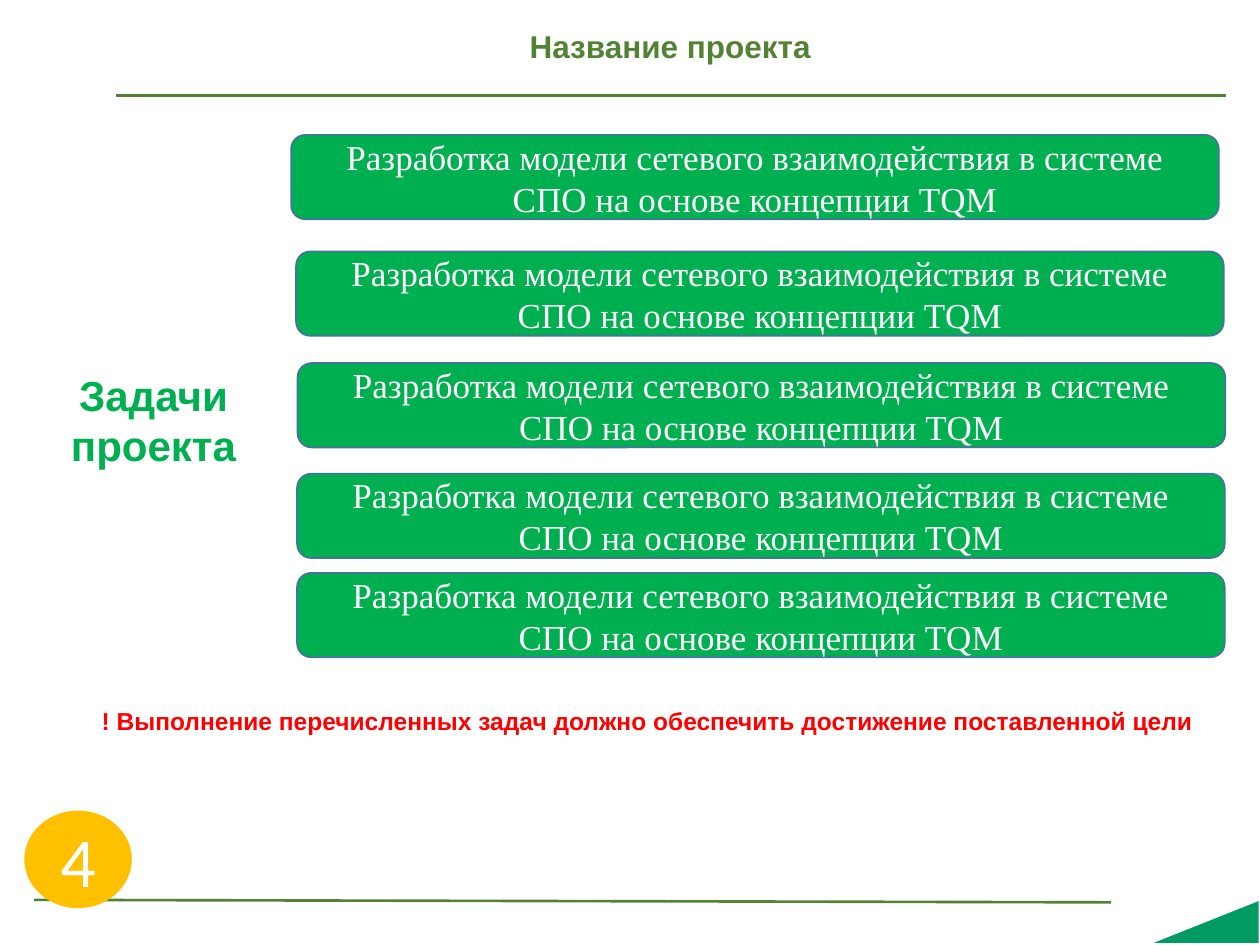
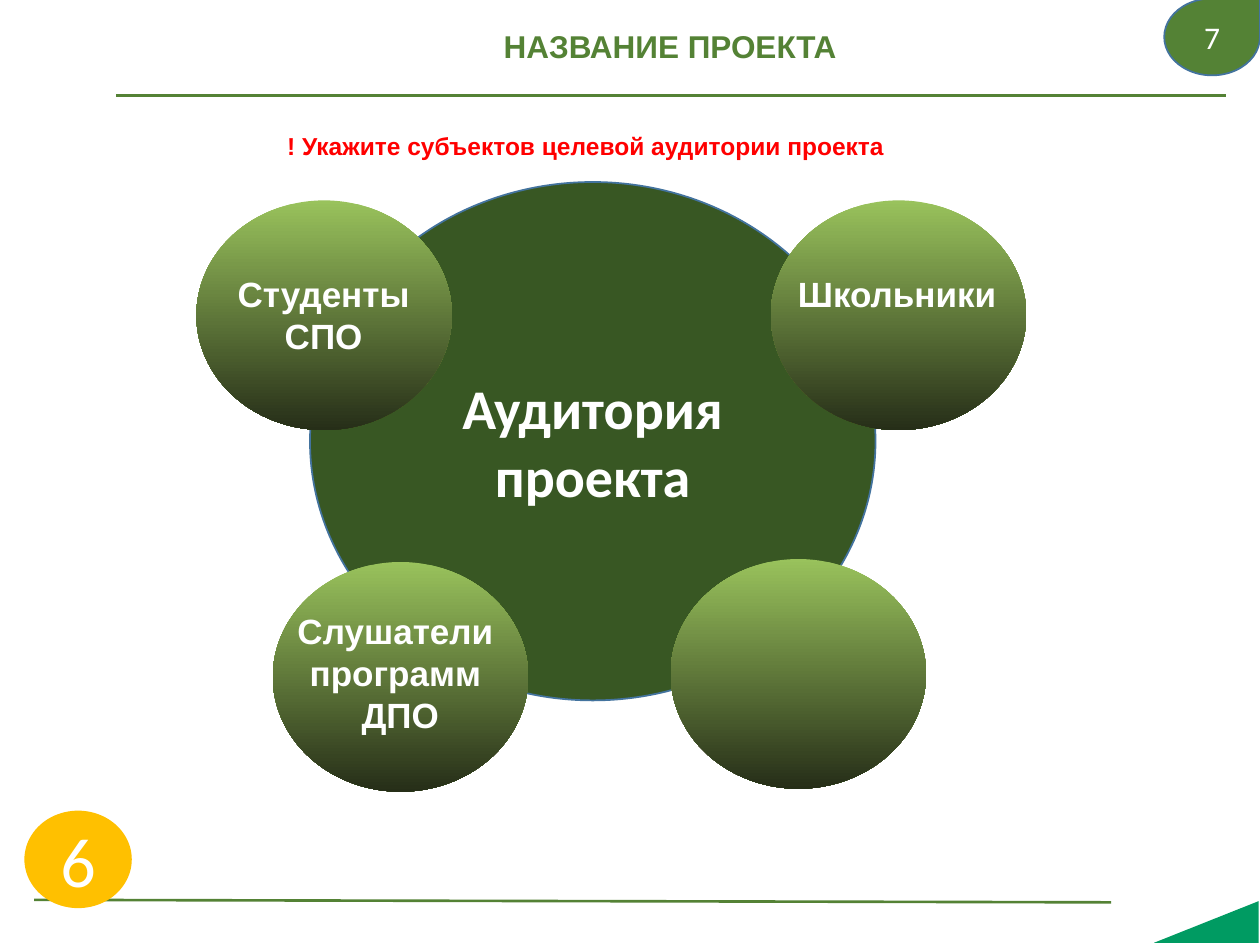
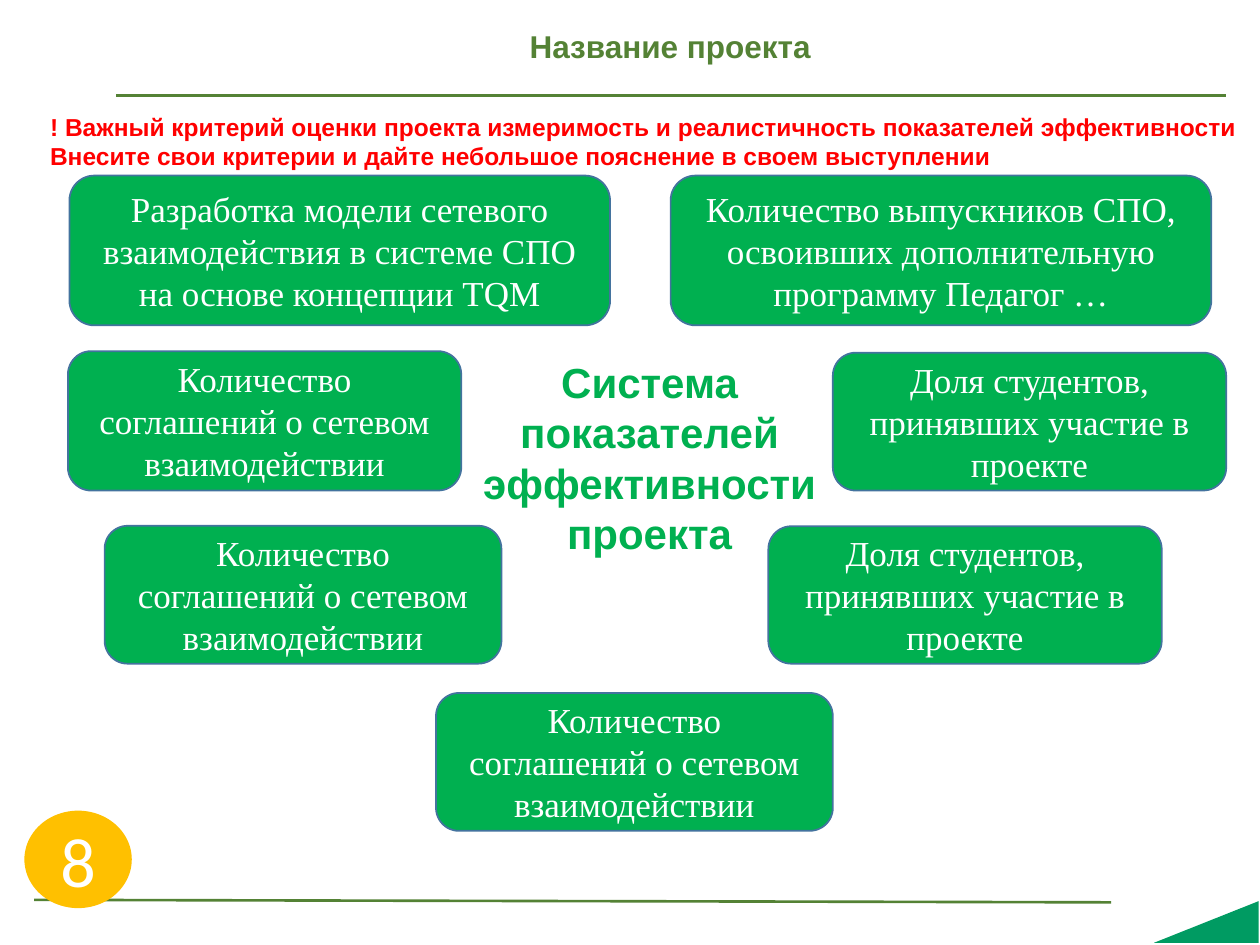
from lxml.etree import SubElement
from pptx import Presentation
from pptx.dml.color import RGBColor
from pptx.enum.shapes import MSO_CONNECTOR, MSO_SHAPE as Shape
from pptx.enum.text import MSO_ANCHOR as Anchor, MSO_AUTO_SIZE as AutoSize, PP_ALIGN as Align
from pptx.oxml.ns import qn
from pptx.util import Cm, Pt

# Colours and text styles
color = RGBColor.from_string
DARK_GREEN, GREEN, OUTLINE = "548235", "00B050", "43739E"
WHITE, RED, YELLOW = "FFFFFF", "FF0000", "FFC000"

STYLES = {
    "title": (DARK_GREEN, {"name": "Arial", "size": Pt(18), "bold": True}),
    "heading": (GREEN, {"name": "Arial", "size": Pt(24), "bold": True}),
    "note": (RED, {"name": "Arial", "size": Pt(14), "bold": True}),
    "card": (WHITE, {"name": "Times New Roman", "size": Pt(20), "bold": False}),
    "number": (WHITE, {"name": "Calibri", "size": Pt(40), "bold": False}),
    "corner": (WHITE, {"name": "Calibri", "size": Pt(18), "bold": False}),
    "center": (WHITE, {"name": "Calibri", "size": Pt(32), "bold": True}),
    "audience": (WHITE, {"name": "Arial", "size": Pt(20), "bold": True}),
}
MIDDLE = {"word_wrap": True, "vertical_anchor": Anchor.MIDDLE}
TOP = {"word_wrap": True, "vertical_anchor": Anchor.TOP}
FREE = {"word_wrap": False, "auto_size": AutoSize.SHAPE_TO_FIT_TEXT}


def write_text(shape, text, style, frame_format, align=Align.CENTER):
    frame = shape.text_frame
    for name, value in frame_format.items():
        setattr(frame, name, value)
    font_color, font_format = STYLES[style]
    frame.text = text
    for paragraph in frame.paragraphs:
        paragraph.alignment = align
        for run in paragraph.runs:
            run.font.color.rgb = color(font_color)
            for name, value in font_format.items():
                setattr(run.font, name, value)


def add_figure(slide, kind, place, fill, outline=None):
    shape = slide.shapes.add_shape(kind, *map(Cm, place))
    shape.shadow.inherit = False
    shape.fill.solid()
    shape.fill.fore_color.rgb = color(fill)
    if outline:
        shape.line.color.rgb = color(outline)
        shape.line.width = Pt(1)
    else:
        shape.line.fill.background()
    return shape


presentation = Presentation()
presentation.slide_width, presentation.slide_height = Cm(25.4), Cm(19.05)

# Shared parts: title, rules, corner triangle, slide number
slides = []
for title_text, number in [("Название проекта", "4"), ("НАЗВАНИЕ ПРОЕКТА", "6"),
                           ("Название проекта", "8")]:
    slide = presentation.slides.add_slide(presentation.slide_layouts[5])
    slides.append(slide)
    title = slide.shapes.title
    title.left, title.top, title.width, title.height = map(Cm, (2.03, 0.13, 22.96, 1.7))
    write_text(title, title_text, "title", MIDDLE)
    title.text_frame.paragraphs[0].line_spacing = 0.9

    for ends in [(2.34, 1.93, 24.71, 1.93), (0.69, 18.14, 22.4, 18.19)]:
        rule = slide.shapes.add_connector(MSO_CONNECTOR.STRAIGHT, *map(Cm, ends))
        rule.line.color.rgb = color(DARK_GREEN)
        rule.line.width = Pt(1.5)
        SubElement(rule._element.spPr, qn("a:effectLst"))

    triangle = add_figure(slide, Shape.RIGHT_TRIANGLE, (23.9, 17.53, 0.84, 2.11), "009B62")
    triangle.rotation = 270
    badge = add_figure(slide, Shape.OVAL, (0.51, 16.36, 2.13, 1.93), YELLOW, YELLOW)
    write_text(badge, number, "number", MIDDLE)

tasks_slide, audience_slide, indicators_slide = slides

# Red notes
notes = [
    (tasks_slide, (1.8, 14.1, 22.76, 0.86),
     "! Выполнение перечисленных задач должно обеспечить достижение поставленной цели"),
    (audience_slide, (5.54, 2.51, 12.83, 0.86),
     "! Укажите субъектов целевой аудитории проекта"),
    (indicators_slide, (0.76, 2.13, 24.64, 1.45),
     "! Важный критерий оценки проекта измеримость и реалистичность показателей эффективности\n"
     "Внесите свои критерии и дайте небольшое пояснение в своем выступлении"),
]
for slide, place, text in notes:
    write_text(slide.shapes.add_textbox(*map(Cm, place)), text, "note", FREE, Align.LEFT)

# Green headings
headings = [
    (tasks_slide, (0.3, 7.32, 5.59, 2.41), "Задачи проекта"),
    (indicators_slide, (8.79, 7.06, 8.61, 2.41), "Система показателей\nэффективности проекта"),
]
for slide, place, text in headings:
    write_text(slide.shapes.add_textbox(*map(Cm, place)), text, "heading", TOP)

# Green cards: tasks and indicators
MODEL = "Разработка модели сетевого взаимодействия в системе СПО на основе концепции TQM"
GRADUATES = "Количество выпускников СПО, освоивших дополнительную программу Педагог …"
AGREEMENTS = "Количество соглашений о сетевом взаимодействии"
STUDENTS = "Доля студентов, принявших участие в проекте"

task_corners = [(5.87, 2.72), (5.97, 5.07), (6, 7.32), (5.99, 9.55), (5.99, 11.55)]
cards = [(tasks_slide, (left, top, 18.7, 1.7), MODEL) for left, top in task_corners]
cards += [(indicators_slide, place, text) for place, text in [
    ((1.4, 3.54, 10.9, 3.02), MODEL),
    ((13.52, 3.54, 10.9, 3.02), GRADUATES),
    ((1.37, 7.08, 7.93, 2.81), AGREEMENTS),
    ((16.79, 7.11, 7.93, 2.78), STUDENTS),
    ((2.11, 10.6, 8, 2.78), AGREEMENTS),
    ((15.49, 10.61, 7.93, 2.77), STUDENTS),
    ((8.79, 13.97, 8, 2.78), AGREEMENTS),
]]
for slide, place, text in cards:
    card = add_figure(slide, Shape.ROUNDED_RECTANGLE, place, GREEN, OUTLINE)
    write_text(card, text, "card", MIDDLE)

# Audience: central circle and corner drop
center = add_figure(audience_slide, Shape.OVAL, (6.25, 3.67, 11.4, 10.45), "385723", OUTLINE)
write_text(center, "Аудитория проекта", "center", MIDDLE)
drop = add_figure(audience_slide, Shape.TEAR, (23.47, -0.03, 1.93, 1.55), DARK_GREEN, OUTLINE)
write_text(drop, "7", "corner", MIDDLE)

# Audience: gradient circles with their labels
groups = [
    (3.96, 4.04, "Студенты\nСПО", (4.52, 5.36, 4.01, 1.96)),
    (15.54, 4.04, "Школьники", (15.8, 5.36, 4.57, 1.12)),
    (5.5, 11.33, "Слушатели \nпрограмм \nДПО", (5.72, 12.17, 4.7, 2.82)),
    (13.52, 11.27, None, None),
]
for left, top, text, label_place in groups:
    circle = add_figure(audience_slide, Shape.OVAL, (left, top, 5.15, 4.63), DARK_GREEN)
    circle.fill.gradient()
    circle.fill.gradient_angle = 270
    for stop, stop_color in zip(circle.fill.gradient_stops, ("99C25C", "262E18")):
        stop.color.rgb = color(stop_color)
    if text:
        label = audience_slide.shapes.add_textbox(*map(Cm, label_place))
        write_text(label, text, "audience", FREE)

presentation.save("out.pptx")
